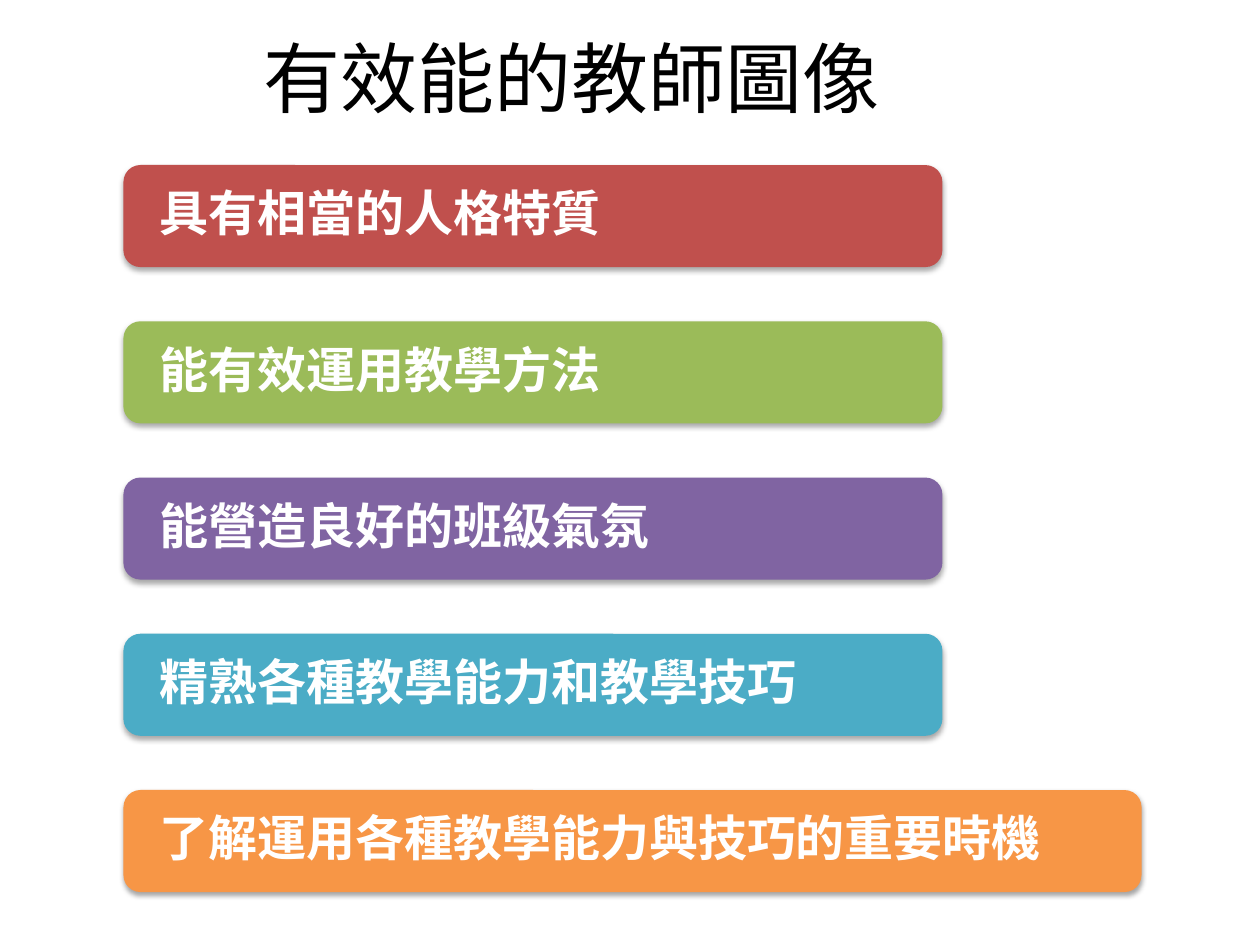
from dataclasses import dataclass

from lxml import etree
from pptx import Presentation
from pptx.dml.color import RGBColor
from pptx.enum import shapes, text
from pptx.oxml import ns
from pptx.util import Inches, Pt


@dataclass(frozen=True)
class Theme:
    font: str = "Calibri"
    title_size: int = 44
    trait_size: int = 28
    ink: str = "000000"
    paper: str = "FFFFFF"
    panel_alpha: int = 90
    shadow_alpha: int = 35


@dataclass(frozen=True)
class Trait:
    wording: str
    color: str
    width: float = 6.5


THEME = Theme()
TRAITS = [
    Trait("具有相當的人格特質", "C0504D"),
    Trait("能有效運用教學方法", "9BBB59"),
    Trait("能營造良好的班級氣氛", "8064A2"),
    Trait("精熟各種教學能力和教學技巧", "4BACC6"),
    Trait("了解運用各種教學能力與技巧的重要時機", "F79646", 8.08),
]
FIRST_TOP, PITCH = 1.31, 1.24
BAR_LEFT, BAR_HEIGHT = 0.98, 0.81
PANEL_LEFT, PANEL_DROP, PANEL_WIDTH, PANEL_HEIGHT = 0.51, 0.41, 9.29, 0.69


def apply(target, formats: dict) -> None:
    for name, value in formats.items():
        setattr(target, name, value)


def style_font(font, size: int, color: str, bold: bool) -> None:
    apply(font, {"name": THEME.font, "size": Pt(size), "bold": bold})
    font.color.rgb = RGBColor.from_string(color)


def add_alpha(color_element, percent: int) -> None:
    etree.SubElement(color_element, ns.qn("a:alpha"), val=str(percent * 1000))


def add_block(group, kind, box: tuple[float, ...], color: str):
    block = group.shapes.add_shape(kind, *map(Inches, box))
    block.fill.solid()
    block.fill.fore_color.rgb = RGBColor.from_string(color)
    block.line.fill.background()
    block.shadow.inherit = False
    return block


def add_drop_shadow(block) -> None:
    effects = block._element.spPr.find(ns.qn("a:effectLst"))
    outer = etree.SubElement(
        effects, ns.qn("a:outerShdw"), blurRad=str(Pt(3.1)), dist=str(Pt(1.8)),
        dir="5400000", rotWithShape="0")
    add_alpha(etree.SubElement(outer, ns.qn("a:srgbClr"), val=THEME.ink), THEME.shadow_alpha)


def add_trait(group, trait: Trait, top: float) -> None:
    panel = add_block(group, shapes.MSO_SHAPE.RECTANGLE,
                      (PANEL_LEFT, top + PANEL_DROP, PANEL_WIDTH, PANEL_HEIGHT), THEME.paper)
    add_alpha(panel._element.spPr.find(".//" + ns.qn("a:srgbClr")), THEME.panel_alpha)

    bar = add_block(group, shapes.MSO_SHAPE.ROUNDED_RECTANGLE,
                    (BAR_LEFT, top, trait.width, BAR_HEIGHT), trait.color)
    add_drop_shadow(bar)
    apply(bar.text_frame, {
        "word_wrap": True,
        "vertical_anchor": text.MSO_ANCHOR.MIDDLE,
        "margin_left": Inches(0.25),
        "margin_right": Inches(0.25),
        "margin_top": 0,
        "margin_bottom": 0,
    })
    wording = bar.text_frame.paragraphs[0]
    apply(wording, {
        "text": trait.wording,
        "alignment": text.PP_ALIGN.LEFT,
        "line_spacing": 0.9,
        "space_after": Pt(10),
    })
    style_font(wording.runs[0].font, THEME.trait_size, THEME.paper, True)


def add_title(slide, wording: str) -> None:
    title = slide.shapes.title
    apply(title, {"left": Inches(0.45), "top": Inches(-0.02),
                  "width": Inches(8.17), "height": Inches(1.25)})
    title.text_frame.vertical_anchor = text.MSO_ANCHOR.MIDDLE
    heading = title.text_frame.paragraphs[0]
    apply(heading, {"text": wording, "alignment": text.PP_ALIGN.CENTER})
    style_font(heading.runs[0].font, THEME.title_size, THEME.ink, False)


def main() -> None:
    deck = Presentation()
    apply(deck, {"slide_width": Inches(10), "slide_height": Inches(7.5)})
    slide = deck.slides.add_slide(deck.slide_layouts.get_by_name("Title Only"))
    add_title(slide, "有效能的教師圖像")
    trait_list = slide.shapes.add_group_shape()
    for row, trait in enumerate(TRAITS):
        add_trait(trait_list, trait, FIRST_TOP + row * PITCH)
    deck.save("out.pptx")


if __name__ == "__main__":
    main()
